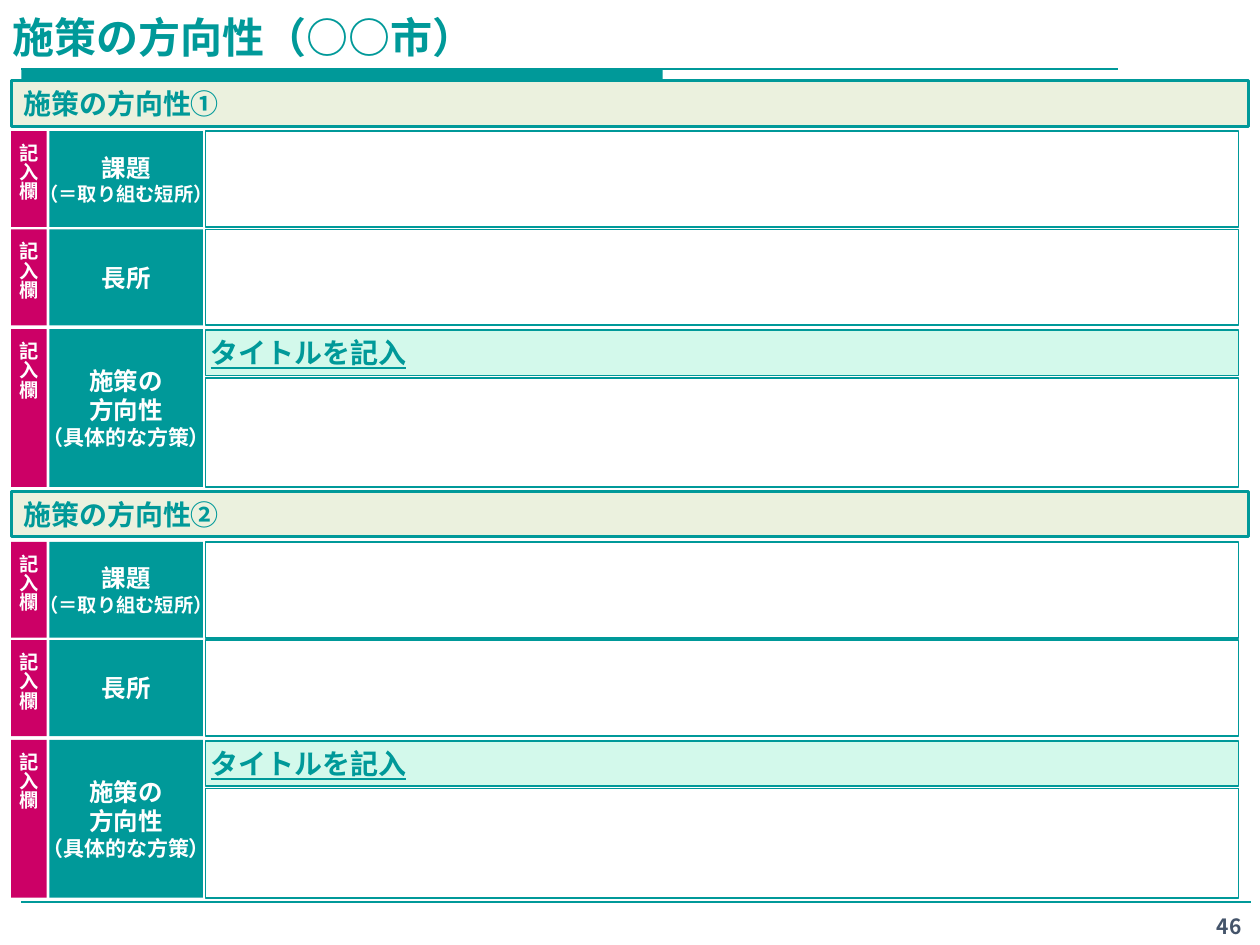
from lxml import etree
from pptx import Presentation
from pptx import util as u
from pptx.dml.color import RGBColor
from pptx.enum import shapes, text
from pptx.oxml.ns import qn

FONT = "Noto Sans CJK JP"
TEAL, PINK, WHITE = "009999", "CC0066", "FFFFFF"
BEIGE, MINT, SLATE = "EBF1DE", "D3F9EB", "44546A"

# Columns: left edge and width
TAG_LEFT, TAG_WIDTH = 6.4, 20.2
LABEL_LEFT, LABEL_WIDTH = 28.2, 87.8
FIELD_LEFT, FIELD_WIDTH = 117.4, 590.4

# Vertical layout, measured from the top of a section
SECTION_TOP, SECTION_PITCH = 46.1, 234.7
BAND_HEIGHT, BAND_WIDTH = 26, 707
PLAN_TITLE_HEIGHT, PLAN_BODY_OFFSET, PLAN_BODY_HEIGHT = 26, 27.8, 62.6

# Rows: offset, height, label lines with their sizes
ISSUE_ROW = (28.8, 54.8, [("課題", 14), ("（＝取り組む短所）", 11)])
STRENGTH_ROW = (85, 54.8, [("長所", 14)])
PLAN_ROW = (142, 90.2, [("施策の", 14), ("方向性", 14), ("（具体的な方策）", 12)])


def color(value):
    return RGBColor.from_string(value)


def write(shape, lines, *, fill=TEAL, align=text.PP_ALIGN.LEFT,
          anchor=text.MSO_ANCHOR.MIDDLE, insets=(3, 3.6, 3, 3.6), wrap=False,
          vertical=False, underline=False, before=0, after=0):
    """Put (text, size) lines into a shape, one paragraph each."""
    frame = shape.text_frame
    frame.word_wrap = wrap
    frame.vertical_anchor = anchor
    (frame.margin_left, frame.margin_top,
     frame.margin_right, frame.margin_bottom) = map(u.Pt, insets)
    if vertical:
        frame._txBody.bodyPr.set("vert", "eaVert")
    for index, (line, size) in enumerate(lines):
        paragraph = frame.add_paragraph() if index else frame.paragraphs[0]
        paragraph.alignment = align
        paragraph.space_before, paragraph.space_after = u.Pt(before), u.Pt(after)
        run = paragraph.add_run()
        run.text = line
        run.font.size = u.Pt(size)
        run.font.bold = True
        run.font.underline = underline
        run.font.color.rgb = color(fill)
        run.font.name = FONT
        east_asian = etree.SubElement(run._r.get_or_add_rPr(), qn("a:ea"))
        east_asian.set("typeface", FONT)


def add_box(slide, left, top, width, height, fill, line_width=0):
    shape = slide.shapes.add_shape(
        shapes.MSO_SHAPE.RECTANGLE, *map(u.Pt, (left, top, width, height)))
    shape.shadow.inherit = False
    shape.fill.solid()
    shape.fill.fore_color.rgb = color(fill)
    if line_width:
        shape.line.color.rgb = color(TEAL)
        shape.line.width = u.Pt(line_width)
    else:
        shape.line.fill.background()
    return shape


def add_rule(slide, left, right, y):
    rule = slide.shapes.add_connector(
        shapes.MSO_CONNECTOR.STRAIGHT, *map(u.Pt, (left, y, right, y)))
    rule.line.color.rgb = color(TEAL)
    rule.line.width = u.Pt(0.75)
    etree.SubElement(rule._element.spPr, qn("a:effectLst"))


def add_text(slide, left, top, width, height, line, size, **options):
    box = slide.shapes.add_textbox(*map(u.Pt, (left, top, width, height)))
    write(box, [(line, size)], insets=(7.2, 3.6, 7.2, 3.6), wrap=True, **options)


def add_field(slide, top, height):
    return add_box(slide, FIELD_LEFT, top, FIELD_WIDTH, height, WHITE, 1)


def add_row_head(slide, top, height, lines):
    """Pink entry tag and teal label at the left of a row."""
    tag = add_box(slide, TAG_LEFT, top, TAG_WIDTH, height, PINK)
    write(tag, [("記入欄", 11)], fill=WHITE, align=text.PP_ALIGN.CENTER,
          anchor=text.MSO_ANCHOR.BOTTOM, vertical=True)
    label = add_box(slide, LABEL_LEFT, top, LABEL_WIDTH, height, TEAL)
    write(label, lines, fill=WHITE, align=text.PP_ALIGN.CENTER)


def add_section(slide, top, heading):
    band = add_box(slide, TAG_LEFT, top, BAND_WIDTH, BAND_HEIGHT, BEIGE, 1.75)
    write(band, [(heading, 16)], insets=(7.2, 3.6, 3, 3.6), wrap=True, after=6)

    # Rows with one plain field
    for offset, height, lines in (ISSUE_ROW, STRENGTH_ROW):
        add_row_head(slide, top + offset, height, lines)
        add_field(slide, top + offset, height)

    # Plan row: a title field above a body field
    offset, height, lines = PLAN_ROW
    plan_top = top + offset
    add_row_head(slide, plan_top, height, lines)
    title = add_box(slide, FIELD_LEFT, plan_top + 0.5, FIELD_WIDTH,
                    PLAN_TITLE_HEIGHT, MINT, 1)
    write(title, [("タイトルを記入", 16)], underline=True)
    add_field(slide, plan_top + PLAN_BODY_OFFSET, PLAN_BODY_HEIGHT)


def main():
    presentation = Presentation()
    presentation.slide_width, presentation.slide_height = u.Pt(720), u.Pt(540)
    slide = presentation.slides.add_slide(presentation.slide_layouts[6])

    # Title with its bar and rule, and the footer rule
    add_box(slide, 12.2, 39.4, 366.5, 8.6, TEAL)
    add_rule(slide, 12.2, 638.6, 39.4)
    add_rule(slide, 12.2, 715, 515.5)
    add_text(slide, 0, 0, 720, 38.9, "施策の方向性（○○市）", 24,
             anchor=text.MSO_ANCHOR.BOTTOM)

    # Two sections with the same form
    for index, number in enumerate("①②"):
        add_section(slide, SECTION_TOP + index * SECTION_PITCH,
                    f"施策の方向性{number}")

    # Page number
    add_text(slide, 686.9, 518.4, 31, 20.2, "46", 12, fill=SLATE,
             align=text.PP_ALIGN.CENTER, anchor=text.MSO_ANCHOR.TOP)

    presentation.save("out.pptx")


if __name__ == "__main__":
    main()
